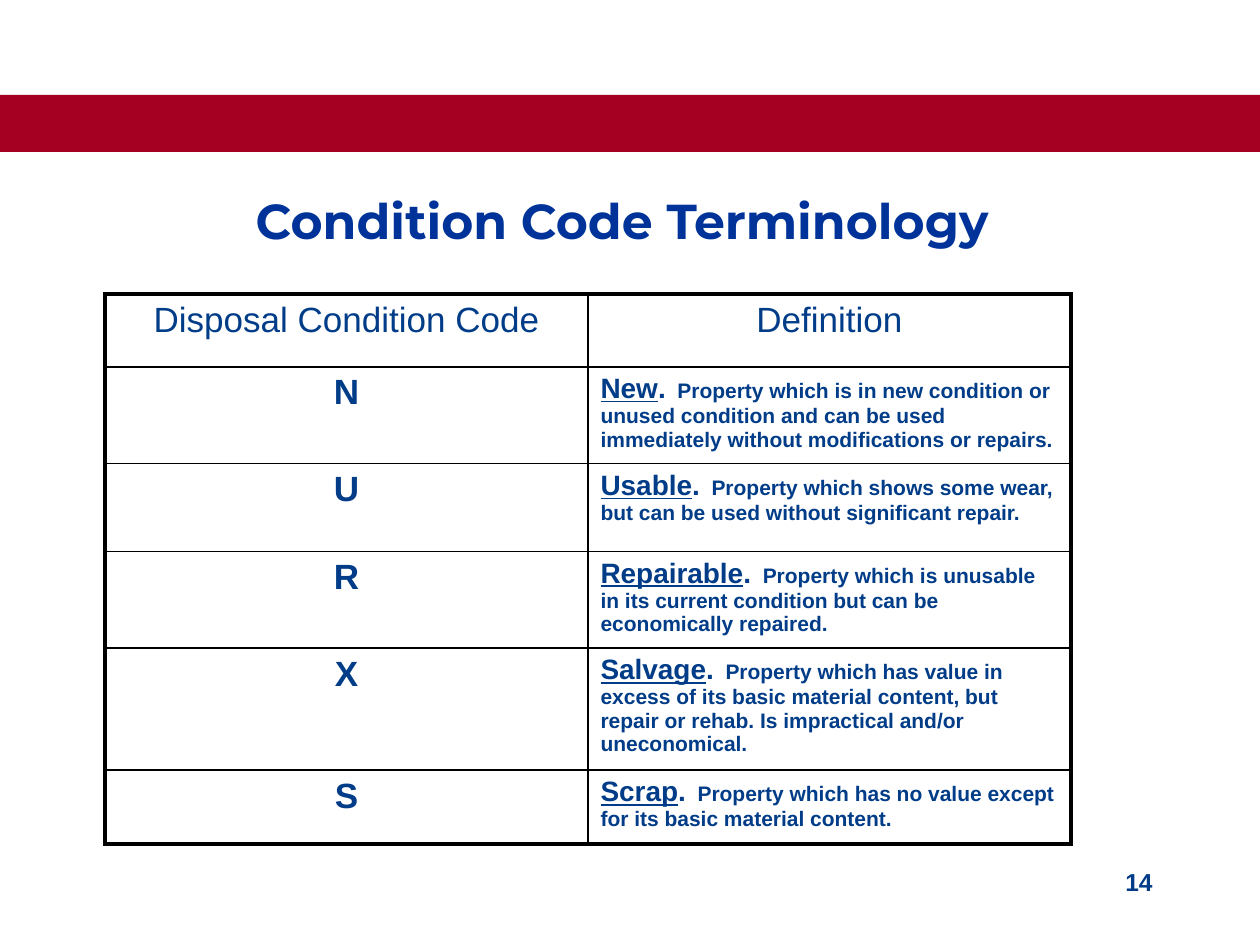
from dataclasses import dataclass

from lxml import etree
from pptx import Presentation
from pptx.dml.color import RGBColor
from pptx.enum.shapes import MSO_SHAPE
from pptx.enum.text import MSO_ANCHOR, PP_ALIGN
from pptx.oxml.ns import qn
from pptx.util import Pt

RECTANGLE = MSO_SHAPE.RECTANGLE
TOP, MIDDLE = MSO_ANCHOR.TOP, MSO_ANCHOR.MIDDLE
LEFT, CENTER, RIGHT = PP_ALIGN.LEFT, PP_ALIGN.CENTER, PP_ALIGN.RIGHT
EMU_PER_PX = 914400 / 126
BLANK_LAYOUT = 6


@dataclass(frozen=True)
class Theme:
    band: str = "A50021"
    title: str = "003399"
    text: str = "013C88"
    border: str = "000000"
    title_font: str = "Montserrat"
    body_font: str = "Arial"
    title_size: int = 28
    code_size: int = 20
    term_size: int = 16
    number_size: int = 14
    definition_size: int = 12
    outer_line: float = 2.25
    inner_line: float = 1


THEME = Theme()
HEADINGS = ("Disposal Condition Code", "Definition")
CONDITIONS = [
    ("N", "New", "Property which is in new condition or unused condition and can be "
     "used immediately without modifications or repairs."),
    ("U", "Usable", "Property which shows some wear, but can be used without "
     "significant repair."),
    ("R", "Repairable", "Property which is unusable in its current condition but can be "
     "economically repaired."),
    ("X", "Salvage", "Property which has value in excess of its basic material content, "
     "but repair or rehab. Is impractical and/or uneconomical."),
    ("S", "Scrap", "Property which has no value except for its basic material content."),
]
ROW_HEIGHTS = (73, 96, 88, 96, 96, 74)


def px(length):
    return round(length * EMU_PER_PX)


def add_run(paragraph, text, size, color=THEME.text, font=THEME.body_font,
            bold=True, underline=False):
    run = paragraph.add_run()
    run.text = text
    run.font.size = Pt(size)
    run.font.name = font
    run.font.bold = bold
    run.font.underline = underline
    run.font.color.rgb = RGBColor.from_string(color)


def add_text(slide, box, text, align, anchor, **text_format):
    frame = slide.shapes.add_textbox(*map(px, box)).text_frame
    frame.word_wrap = True
    frame.vertical_anchor = anchor
    paragraph = frame.paragraphs[0]
    paragraph.alignment = align
    add_run(paragraph, text, **text_format)


def add_band(slide, box):
    band = slide.shapes.add_shape(RECTANGLE, *map(px, box))
    band.shadow.inherit = False
    band.fill.solid()
    band.fill.fore_color.rgb = RGBColor.from_string(THEME.band)
    band.line.fill.background()


def set_borders(cell, outer_sides):
    """Draw all four borders, heavier on the sides that face out of the table."""
    properties = cell._tc.get_or_add_tcPr()
    for side in "LRTB":
        width = THEME.outer_line if side in outer_sides else THEME.inner_line
        line = etree.SubElement(properties, qn(f"a:ln{side}"), w=str(Pt(width)))
        fill = etree.SubElement(line, qn("a:solidFill"))
        etree.SubElement(fill, qn("a:srgbClr"), val=THEME.border)


def add_condition_table(slide, box):
    row_count, column_count = len(CONDITIONS) + 1, len(HEADINGS)
    table = slide.shapes.add_table(row_count, column_count, *map(px, box)).table
    table.first_row = table.horz_banding = False
    for column in table.columns:
        column.width = px(box[2] / column_count)
    for row, height in zip(table.rows, ROW_HEIGHTS):
        row.height = px(height)

    for row in range(row_count):
        for column in range(column_count):
            cell = table.cell(row, column)
            sides = "L" if column == 0 else "R"
            sides += {0: "T", row_count - 1: "B"}.get(row, "")
            set_borders(cell, sides)
            cell.fill.background()
            paragraph = cell.text_frame.paragraphs[0]
            paragraph.alignment = CENTER
            if row == 0:
                add_run(paragraph, HEADINGS[column], THEME.code_size, bold=False)
                continue
            code, term, definition = CONDITIONS[row - 1]
            if column == 0:
                add_run(paragraph, code, THEME.code_size)
            else:
                paragraph.alignment = LEFT
                add_run(paragraph, term, THEME.term_size, underline=True)
                add_run(paragraph, ".", THEME.term_size)
                add_run(paragraph, f"  {definition}", THEME.definition_size)


def main():
    presentation = Presentation()
    presentation.slide_width, presentation.slide_height = px(1260), px(945)
    slide = presentation.slides.add_slide(presentation.slide_layouts[BLANK_LAYOUT])
    add_band(slide, (0, 95, 1260, 57))
    add_text(slide, (39, 181, 1166, 78), "Condition Code Terminology", CENTER, MIDDLE,
             size=THEME.title_size, color=THEME.title, font=THEME.title_font)
    add_condition_table(slide, (105, 294, 966, sum(ROW_HEIGHTS)))
    add_text(slide, (903, 861, 262, 63), "14", RIGHT, TOP, size=THEME.number_size)
    presentation.save("out.pptx")


if __name__ == "__main__":
    main()
